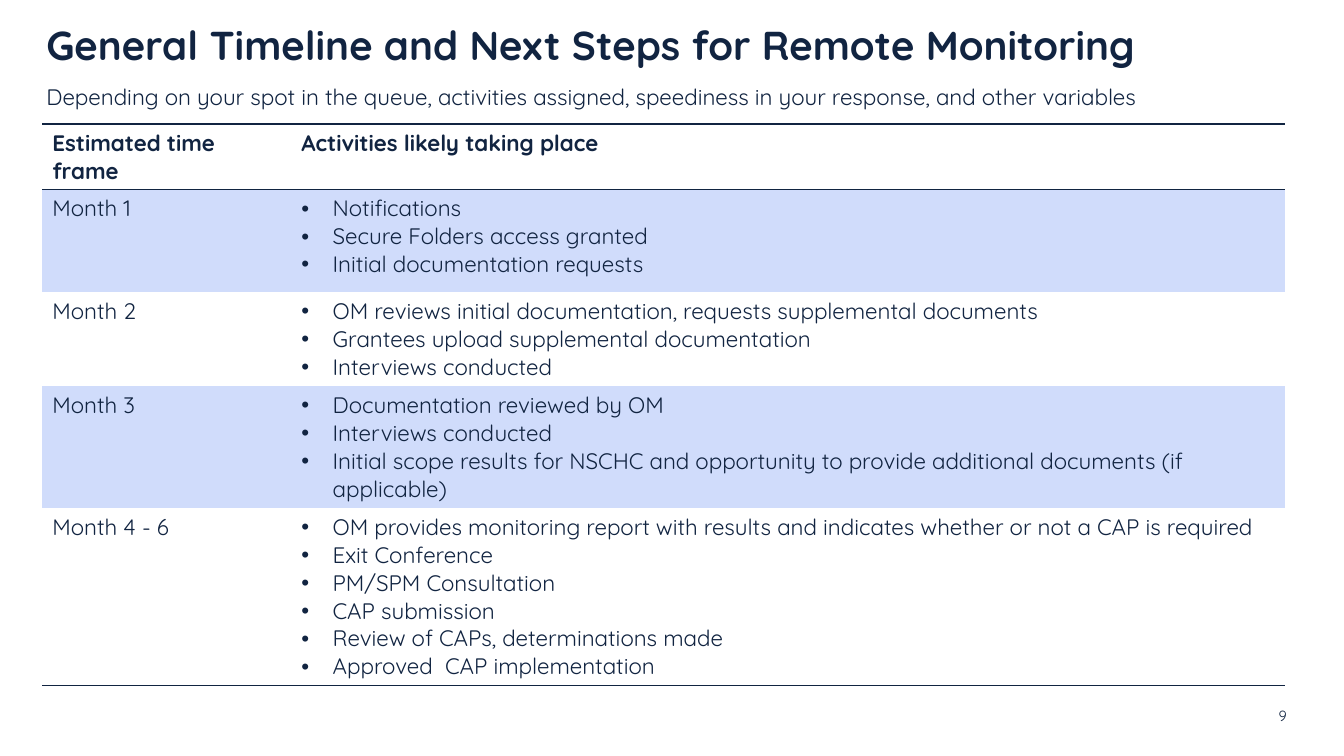
"""Build the remote monitoring timeline slide."""
from lxml.etree import SubElement
from pptx import Presentation
from pptx.dml.color import RGBColor
from pptx.enum.text import MSO_ANCHOR as Anchor, PP_ALIGN as Align
from pptx.oxml.ns import qn
from pptx.util import Inches, Pt

NAVY = RGBColor(0x11, 0x24, 0x41)
PALE_BLUE = RGBColor(0xD0, 0xDC, 0xFB)
NO_STYLE = "{2D5ABB26-0587-4C30-8999-92F81FD0307C}"
HEADINGS = ("Estimated time frame", ["Activities likely taking place"])
MONTHS = [
    ("Month 1", ["Notifications", "Secure Folders access granted", "Initial documentation requests"]),
    ("Month 2", ["OM reviews initial documentation, requests supplemental documents",
                 "Grantees upload supplemental documentation",
                 "Interviews conducted"]),
    ("Month 3", ["Documentation reviewed by OM",
                 "Interviews conducted",
                 "Initial scope results for NSCHC and opportunity to provide additional documents (if applicable)"]),
    ("Month 4 - 6", ["OM provides monitoring report with results and indicates whether or not a CAP is required",
                     "Exit Conference",
                     "PM/SPM Consultation",
                     "CAP submission",
                     "Review of CAPs, determinations made",
                     "Approved  CAP implementation"]),
]
ROW_HEIGHTS = [0.65, 1.02, 0.93, 1.21, 1.76]
COLUMN_WIDTHS = [2.47, 9.86]


def write(frame, lines, size=16, bold=False, bullet=False, align=Align.LEFT, spacing=None, margin=None,
          anchor=None):
    frame.word_wrap = True
    if anchor is not None:
        frame.vertical_anchor = anchor
    if margin is not None:
        frame.margin_left = frame.margin_right = frame.margin_top = frame.margin_bottom = margin
    for index, line in enumerate(lines):
        para = frame.add_paragraph() if index else frame.paragraphs[0]
        para.alignment = align
        if spacing:
            para.line_spacing = spacing
        if bullet:
            properties = para._p.get_or_add_pPr()
            properties.set("marL", str(Inches(0.31)))
            properties.set("indent", str(-Inches(0.31)))
            SubElement(properties, qn("a:buFont"), typeface="Arial")
            SubElement(properties, qn("a:buChar"), char="•")
        span = para.add_run()
        span.text = line
        span.font.name = "Quicksand"
        span.font.size = Pt(size)
        span.font.bold = bold
        span.font.color.rgb = NAVY


def draw_border(cell, side):
    line = SubElement(cell._tc.get_or_add_tcPr(), qn(f"a:{side}"), w=str(Pt(1)))
    fill = SubElement(line, qn("a:solidFill"))
    SubElement(fill, qn("a:srgbClr"), val=str(NAVY))


deck = Presentation()
deck.slide_width = Inches(13.33)
deck.slide_height = Inches(7.5)
page = deck.slides.add_slide(deck.slide_layouts[5])

title = page.shapes.title
title.left, title.top, title.width, title.height = Inches(0.46), Inches(0.23), Inches(11.24), Inches(0.46)
write(title.text_frame, ["General Timeline and Next Steps for Remote Monitoring"],
      size=28.8, bold=True, spacing=0.9, margin=0, anchor=Anchor.BOTTOM)

subtitle = page.shapes.add_textbox(Inches(0.46), Inches(0.69), Inches(12.25), Inches(0.32))
write(subtitle.text_frame,
      ["Depending on your spot in the queue, activities assigned, speediness in your response, and other variables"],
      spacing=1.5, margin=0)

timeline = page.shapes.add_table(len(ROW_HEIGHTS), len(COLUMN_WIDTHS), Inches(0.42), Inches(1.23),
                                 Inches(sum(COLUMN_WIDTHS)), Inches(sum(ROW_HEIGHTS)))
table = timeline.table
table.first_row = True
table.horz_banding = False
table._tbl.tblPr.find(qn("a:tableStyleId")).text = NO_STYLE
for column, width in zip(table.columns, COLUMN_WIDTHS):
    column.width = Inches(width)

last_row = len(MONTHS)
for row, (period, activities) in enumerate([HEADINGS, *MONTHS]):
    table.rows[row].height = Inches(ROW_HEIGHTS[row])
    for column, lines in enumerate([[period], activities]):
        cell = table.cell(row, column)
        write(cell.text_frame, lines, bold=row == 0, bullet=row > 0 and column == 1)
        if row == 0:
            draw_border(cell, "lnT")
        if row in (0, last_row):
            draw_border(cell, "lnB")
        if row % 2:
            cell.fill.solid()
            cell.fill.fore_color.rgb = PALE_BLUE
        else:
            cell.fill.background()

page_number = page.shapes.add_textbox(Inches(12.44), Inches(7.02), Inches(0.32), Inches(0.15))
write(page_number.text_frame, ["9"], size=10.5, align=Align.RIGHT, margin=0, anchor=Anchor.MIDDLE)

deck.save("out.pptx")
